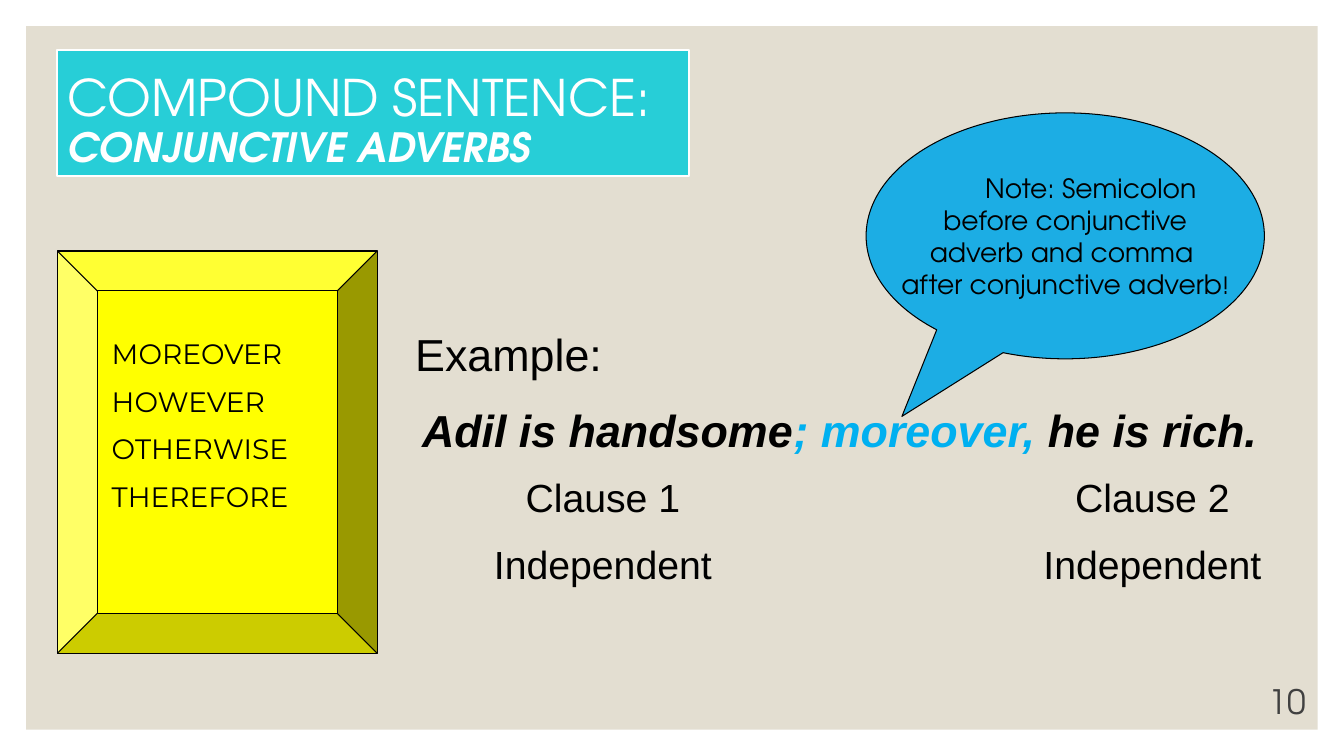
import pptx
import pptx.util
import pptx.dml.color
import pptx.enum.shapes
import pptx.enum.text
import pptx.oxml.ns
import lxml.etree

Pt = pptx.util.Pt
Inches = pptx.util.Inches
RGB = pptx.dml.color.RGBColor
KIND = pptx.enum.shapes.MSO_SHAPE
ALIGN = pptx.enum.text.PP_ALIGN
ANCHOR = pptx.enum.text.MSO_ANCHOR

BLACK = RGB(0x00, 0x00, 0x00)
WHITE = RGB(0xFF, 0xFF, 0xFF)
SAND = RGB(0xE3, 0xDE, 0xD1)
YELLOW = RGB(0xFF, 0xFF, 0x00)
TEAL = RGB(0x27, 0xCE, 0xD7)
BLUE = RGB(0x1C, 0xAD, 0xE4)
SKY = RGB(0x00, 0xB0, 0xF0)
GREY = RGB(0x40, 0x40, 0x40)
HEAD, LIST, BODY = "TeX Gyre Adventor", "Montserrat", "Arial"

WIDE, HIGH = 13.33, 7.5
EDGE = 0.26
LEFT = 0.57
TITLE = [("COMPOUND SENTENCE:", 36, False), ("CONJUNCTIVE ADVERBS", 28.8, True)]
WORDS = ["MOREOVER", "HOWEVER", "OTHERWISE", "THEREFORE"]
SAMPLE = [("Adil is handsome", BLACK), ("; moreover, ", SKY), ("he is rich. ", BLACK)]
CLAUSES = [("Clause 1", "Clause 2"), ("Independent", "Independent")]
CENTRES = (1.14, 6.59)
NOTE = ["Note: Semicolon ", "before conjunctive", "adverb and comma ", "after conjunctive adverb"]

deck = pptx.Presentation()
deck.slide_width, deck.slide_height = Inches(WIDE), Inches(HIGH)
slide = deck.slides.add_slide(deck.slide_layouts[6])


def draw(kind, box, fill, line=None, width=0.75):
    shape = slide.shapes.add_shape(kind, *map(Inches, box))
    shape.shadow.inherit = False
    shape.fill.solid()
    shape.fill.fore_color.rgb = fill
    if line is None:
        shape.line.fill.background()
    else:
        shape.line.color.rgb = line
        shape.line.width = Pt(width)
    return shape


def box(place):
    frame = slide.shapes.add_textbox(*map(Inches, place)).text_frame
    frame.word_wrap = True
    return frame


def add(frame, first, text, size, font, color, align=ALIGN.LEFT, gap=0):
    para = frame.paragraphs[0] if first else frame.add_paragraph()
    para.alignment = align
    para.font.size = Pt(size)
    para.font.name = font
    para.font.color.rgb = color
    if gap and not first:
        para.space_before = Pt(gap)
    if text:
        para.add_run().text = text
    return para


draw(KIND.RECTANGLE, (EDGE, EDGE, WIDE - 2 * EDGE, HIGH - 2 * EDGE), SAND)
draw(KIND.BEVEL, (LEFT, 2.49, 3.17, 3.99), YELLOW, BLACK).adjustments[0] = 0.125

frame = draw(KIND.RECTANGLE, (LEFT, 0.5, 6.26, 1.25), TEAL, WHITE, 1.5).text_frame
frame.vertical_anchor = ANCHOR.BOTTOM
for i, (text, size, bold) in enumerate(TITLE):
    para = add(frame, i == 0, text, size, HEAD, WHITE)
    para.line_spacing = 0.9
    para.font.bold = para.font.italic = bold

frame = box((1.01, 3.29, 2.25, 2.46))
for i, word in enumerate(WORDS):
    add(frame, i == 0, word, 20, LIST, BLACK, gap=10)

frame = box((11.45, 6.9, 1.6, 0.3))
frame.vertical_anchor = ANCHOR.BOTTOM
add(frame, True, "10", 24, HEAD, GREY, ALIGN.RIGHT)

frame = box((4.02, 3.19, 8.74, 1.45))
add(frame, True, "Example:", 32, BODY, BLACK)
para = add(frame, False, "", 32, BODY, BLACK, ALIGN.CENTER, 16)
para.font.bold = para.font.italic = True
for text, color in SAMPLE:
    run = para.add_run()
    run.text = text
    run.font.color.rgb = color

frame = box((4.74, 4.65, 8.17, 1.28))
for i, pair in enumerate(CLAUSES):
    para = add(frame, i == 0, "\t" + "\t".join(pair), 28, BODY, BLACK, gap=14)
    stops = lxml.etree.Element(pptx.oxml.ns.qn("a:tabLst"))
    for mid in CENTRES:
        lxml.etree.SubElement(stops, pptx.oxml.ns.qn("a:tab"), pos=str(Inches(mid)), algn="ctr")
    props = para._p.get_or_add_pPr()
    props.insert(props.index(props.find(pptx.oxml.ns.qn("a:defRPr"))), stops)

bubble = draw(KIND.OVAL_CALLOUT, (8.59, 1.12, 3.95, 2.44), BLUE, BLACK)
bubble.adjustments[0], bubble.adjustments[1] = -0.41, 0.734
frame = bubble.text_frame
frame.word_wrap = False
frame.vertical_anchor = ANCHOR.MIDDLE
for i, text in enumerate(NOTE):
    para = add(frame, i == 0, text, 19, HEAD, BLACK, ALIGN.CENTER)
    if i == 0:
        para._p.get_or_add_pPr().set("marL", str(Inches(0.58)))
mark = para.add_run()
mark.text = "!"
mark.font.size = Pt(17)

deck.save("out.pptx")
